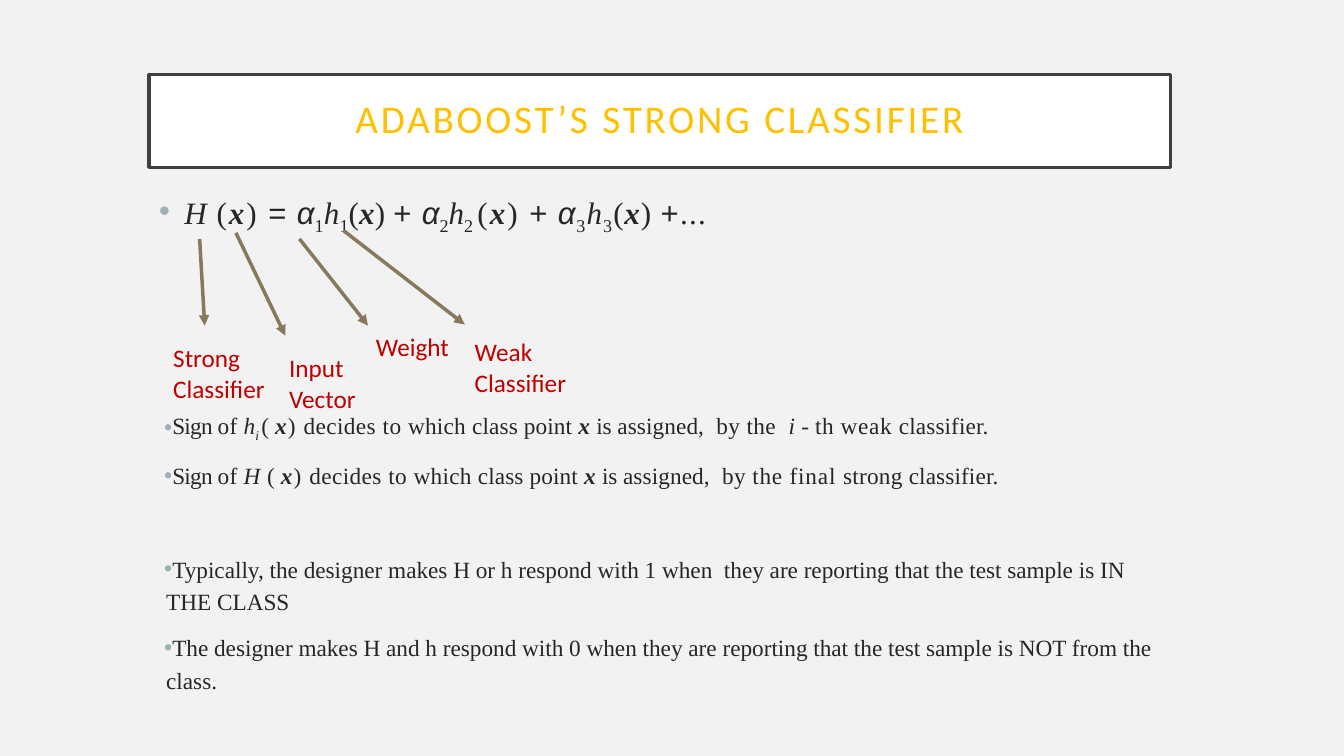
from lxml.etree import SubElement
from pptx import Presentation
from pptx.dml.color import RGBColor
from pptx.enum.shapes import MSO_CONNECTOR
from pptx.enum.text import MSO_ANCHOR, MSO_AUTO_SIZE, PP_ALIGN
from pptx.oxml.ns import qn
from pptx.util import Inches, Pt

PAPER = RGBColor(0xF2, 0xF2, 0xF2)
WHITE = RGBColor(0xFF, 0xFF, 0xFF)
FRAME = RGBColor(0x40, 0x40, 0x40)
GOLD = RGBColor(0xFF, 0xC0, 0x00)
INK = RGBColor(0x26, 0x26, 0x26)
BULLET = RGBColor(0x9B, 0xAF, 0xB5)
ARROW = RGBColor(0x87, 0x79, 0x5D)
RED = RGBColor(0xC0, 0x00, 0x00)
SERIF, SANS, MATH = "Times New Roman", "Calibri", "Arial"

# Style letters: i italic, b bold, s subscript, m math font
SIGN_OF = [("Sign ", "", -0.5), ("of ", "", 0.2)]
DECIDES = [("( ", "", 0.1), ("x", "bi", 0.8), (") ", "", 0.8),
           ("decides ", "", 0.3), ("to ", "", 0.4), ("which ", "", 0.2),
           ("class point ", "", 0.1), ("x ", "bi", 0.2), ("is ", "", -0.1),
           ("assigned,  ", "", 0.1)]
WEAK_RULE = SIGN_OF + [("h", "i", -0.5), ("i ", "is", -0.7)] + DECIDES + [
    ("by the  ", "", 0.3), ("i ", "i", 0.1), ("- ", "", 0.1), ("th ", "", 0.4),
    ("weak ", "", 0.5), ("classifier.", "", 0.1)]
STRONG_RULE = SIGN_OF + [("H ", "i", 0.3)] + DECIDES + [
    ("by ", "", 0.3), ("the final ", "", 0.6), ("strong ", "", 0.2),
    ("classifier.", "", 0.1)]
IN_CLASS = [("Typically, the designer makes H or h respond with 1 when  they are "
             "reporting that the test sample is IN THE CLASS", "", 0)]
NOT_IN_CLASS = [("The designer makes H and h respond with 0 when they are "
                 "reporting that the test sample is NOT from the class.", "", 0)]

# Arrow start, arrow end, label, label box
CALLOUTS = [
    ((1.98, 2.37), (2.03, 3.23), "Strong Classifier", (1.62, 3.35, 1.2, 0.71)),
    ((2.34, 2.31), (2.83, 3.33), "Input Vector", (2.77, 3.45, 1.06, 0.71)),
    ((2.97, 2.37), (3.65, 3.23), "Weight", (3.63, 3.24, 1.06, 0.4)),
    ((3.41, 2.29), (4.61, 3.22), "Weak Classifier", (4.61, 3.29, 1.3, 0.71)),
]


def argument(spacing):
    return [("(", "", spacing), ("x", "bi", spacing), (") ", "", spacing)]


def term(n, spacing, sub_spacing, arg_spacing, gap=""):
    """Runs of one weighted weak classifier."""
    return [("α", "im", spacing), (n, "s", sub_spacing), ("h", "i", spacing),
            (n + gap, "s", sub_spacing)] + argument(arg_spacing)


def formula():
    plus = [("+ ", "m", 0.6)]
    return ([("H ", "i", 0.7)] + argument(1.4) + [("= ", "m", 0.6)]
            + term("1", 0.1, 0.1, 0.1) + plus
            + term("2", -0.1, -0.1, 1.4, " ") + plus
            + term("3", 0.6, 0.9, 0.6) + [("+", "m", 0.9), ("...", "", 0.9)])


def add_run(p, text, size, font, color, spacing=0):
    r = p.add_run()
    r.text = text
    r.font.size = Pt(size)
    r.font.name = font
    r.font.color.rgb = color
    rPr = r.font._element
    if spacing:
        rPr.set("spc", str(round(spacing * 100)))
    return r


def add_bullet(p, margin, indent):
    pPr = p._p.get_or_add_pPr()
    pPr.set("marL", str(Inches(margin)))
    pPr.set("indent", str(Inches(indent)))
    color = SubElement(pPr, qn("a:buClr"))
    SubElement(color, qn("a:srgbClr")).set("val", str(BULLET))
    SubElement(pPr, qn("a:buFont")).set("typeface", MATH)
    SubElement(pPr, qn("a:buChar")).set("char", "•")


def add_title(s, box):
    sp = s.shapes.title
    sp.left, sp.top, sp.width, sp.height = map(Inches, box)
    sp.fill.solid()
    sp.fill.fore_color.rgb = WHITE
    sp.line.color.rgb = FRAME
    sp.line.width = Pt(2.5)
    tf = sp.text_frame
    tf.vertical_anchor = MSO_ANCHOR.MIDDLE
    tf.margin_left = tf.margin_right = tf.margin_top = tf.margin_bottom = Inches(0.2)
    p = tf.paragraphs[0]
    p.alignment = PP_ALIGN.CENTER
    p.line_spacing = 0.9
    add_run(p, "ADABOOST’S STRONG CLASSIFIER", 28, SANS, GOLD, 2)


def add_body(s, box):
    tf = s.shapes.add_textbox(*map(Inches, box)).text_frame
    tf.word_wrap = True
    # Runs, size, line spacing, space before, margin, indent
    rows = [(formula(), 22.2, 0.9, 0, 0.25, -0.25),
            (WEAK_RULE, 16.6, 1.18, 124, 0.07, -0.02),
            (STRONG_RULE, 16.6, 1.16, 10, 0.07, -0.02),
            (IN_CLASS, 16.6, 1.16, 43.5, 0.07, -0.02),
            (NOT_IN_CLASS, 16.6, 1.16, 10, 0.07, -0.02)]
    for i, (runs, size, leading, before, margin, indent) in enumerate(rows):
        p = tf.add_paragraph() if i else tf.paragraphs[0]
        p.line_spacing = leading
        p.space_before = Pt(before)
        add_bullet(p, margin, indent)
        for text, style, spacing in runs:
            font = MATH if "m" in style else SERIF
            r = add_run(p, text, size, font, INK, spacing)
            r.font.bold = "b" in style
            r.font.italic = "i" in style
            if "s" in style:
                r.font._element.set("baseline", "-24000")


def add_callout(s, start, end, label, box):
    """Arrow from a symbol of the formula to its red label."""
    line = s.shapes.add_connector(MSO_CONNECTOR.STRAIGHT,
                                  *map(Inches, start + end))
    line.line.color.rgb = ARROW
    line.line.width = Pt(2.5)
    SubElement(line.line._get_or_add_ln(), qn("a:tailEnd")).set("type", "triangle")
    SubElement(line._element.spPr, qn("a:effectLst"))
    tf = s.shapes.add_textbox(*map(Inches, box)).text_frame
    tf.word_wrap = True
    tf.auto_size = MSO_AUTO_SIZE.SHAPE_TO_FIT_TEXT
    add_run(tf.paragraphs[0], label, 18, SANS, RED)


def main():
    prs = Presentation()
    prs.slide_width, prs.slide_height = Inches(13.33), Inches(7.5)
    s = prs.slides.add_slide(prs.slide_layouts.get_by_name("Title Only"))
    s.background.fill.solid()
    s.background.fill.fore_color.rgb = PAPER
    add_title(s, (1.48, 0.74, 10.13, 0.92))
    add_body(s, (1.48, 1.88, 10.09, 5.25))
    for callout in CALLOUTS:
        add_callout(s, *callout)
    prs.save("out.pptx")


if __name__ == "__main__":
    main()
